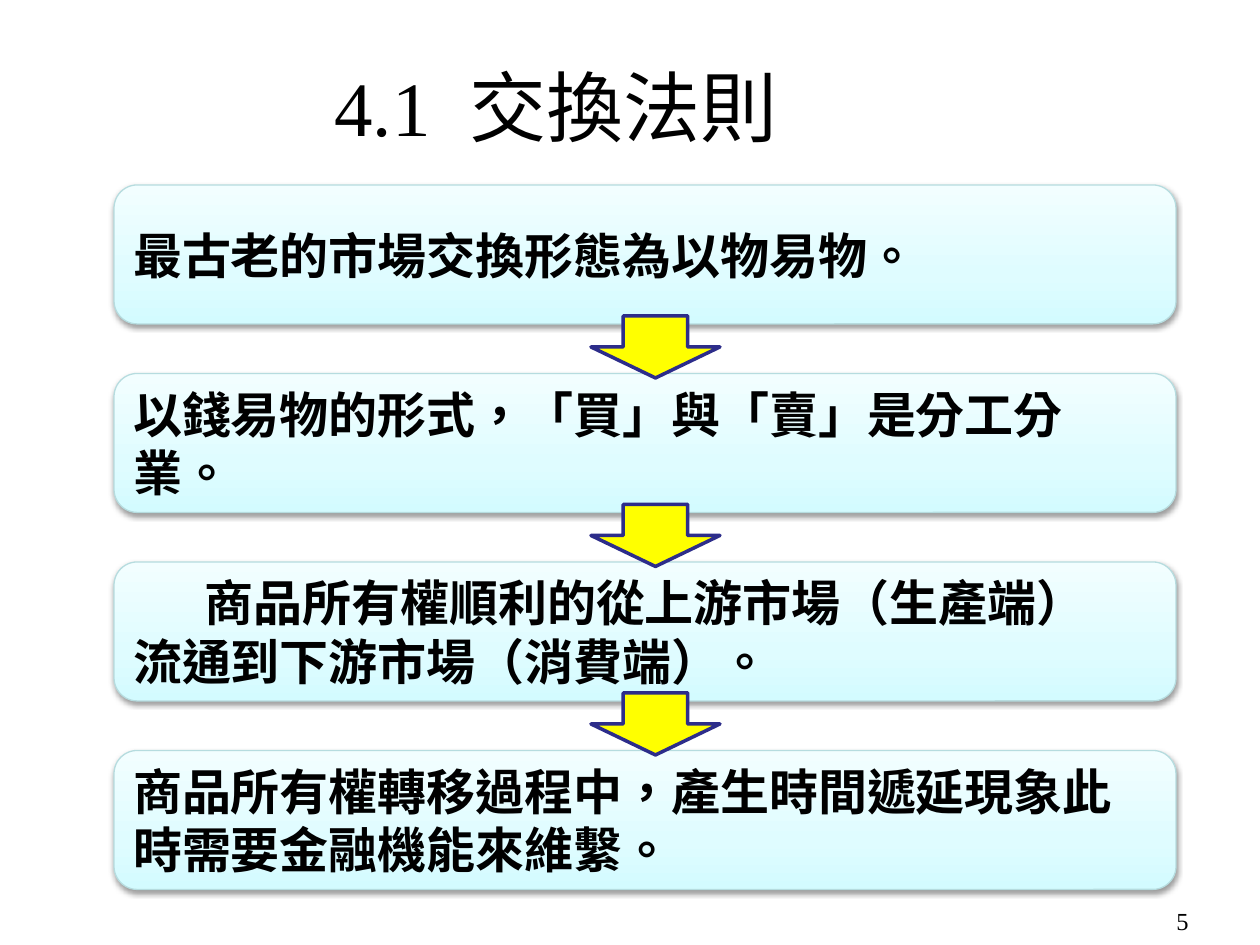
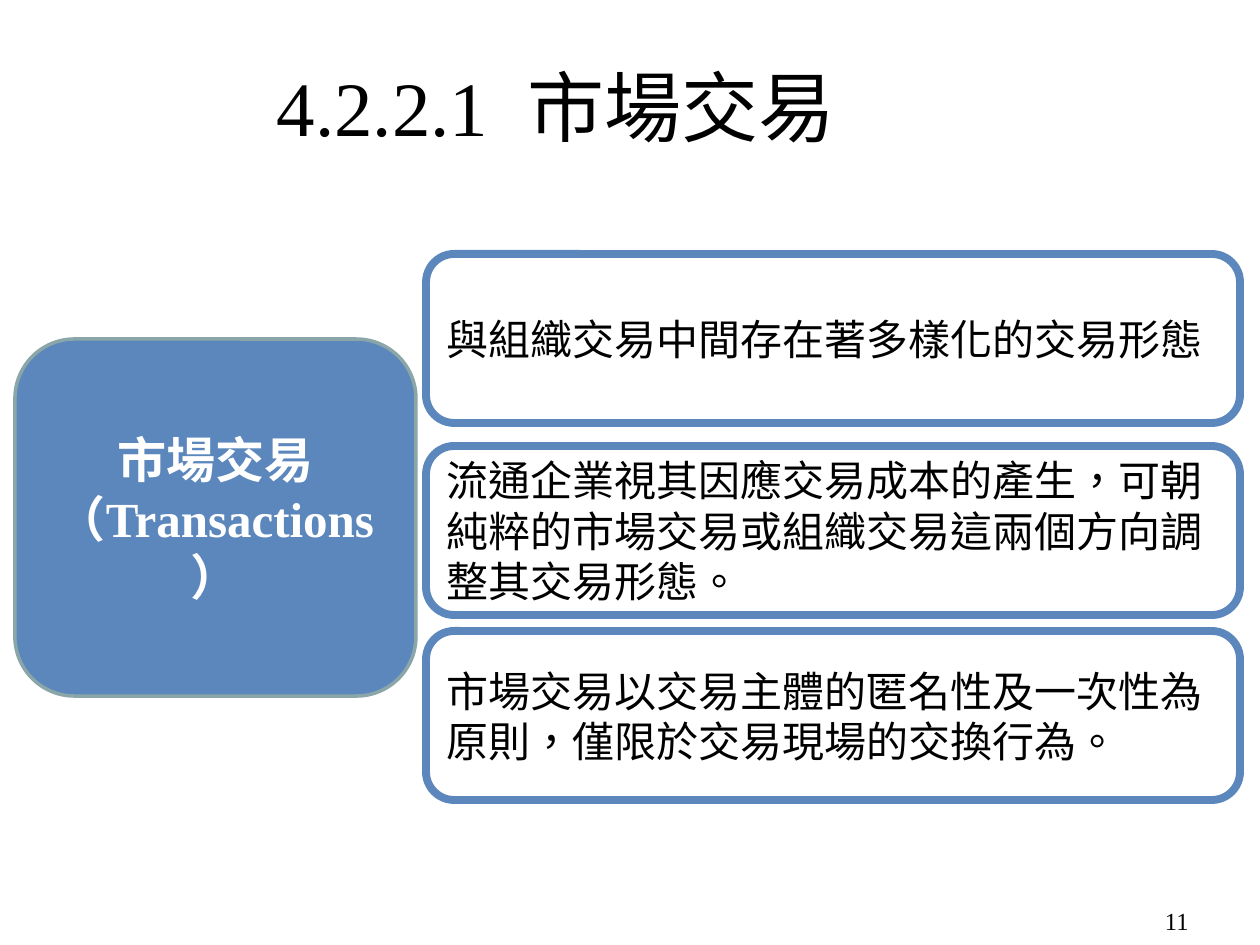
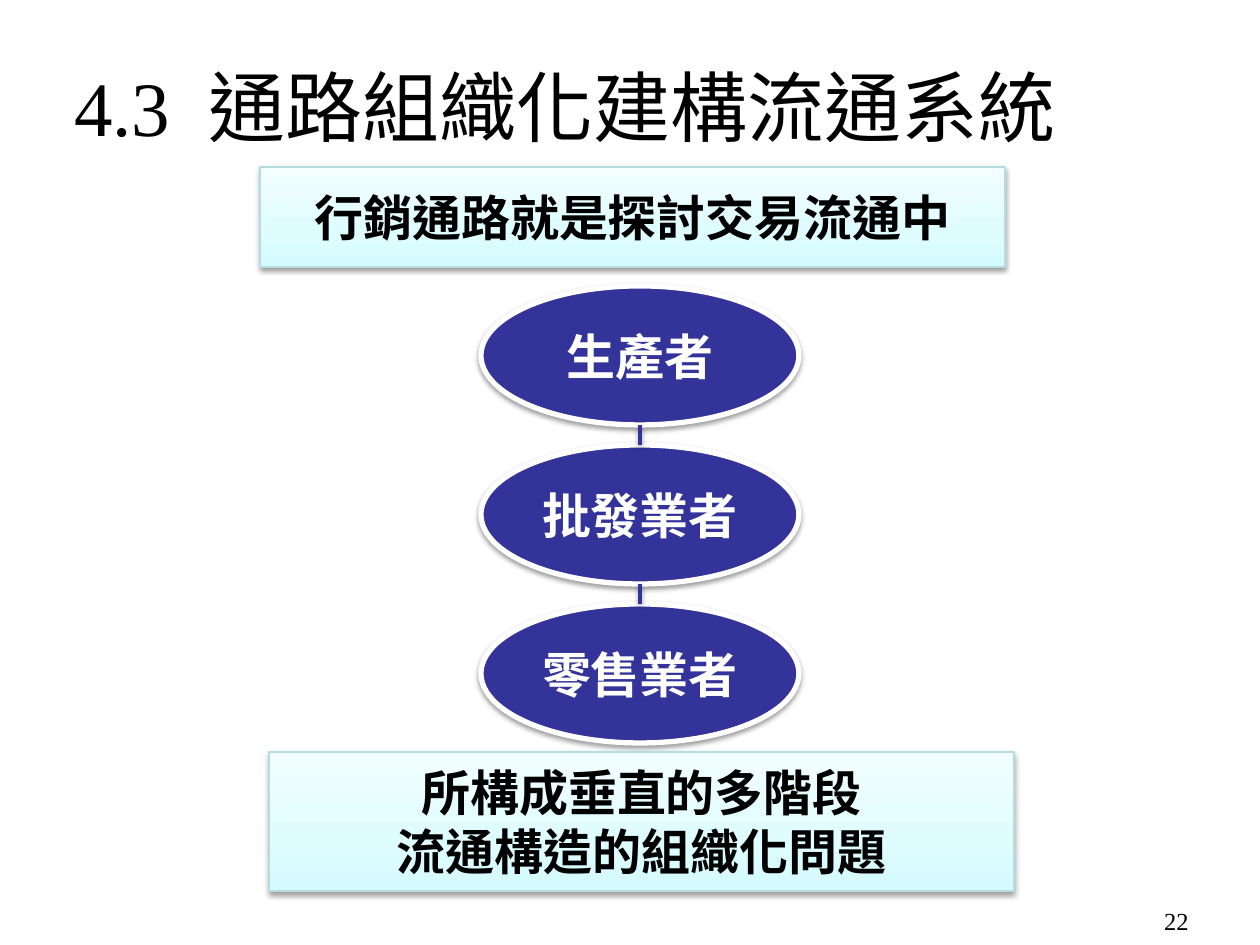
"""Build three slides on exchange rules, market transactions and channel organisation."""
from copy import deepcopy
from dataclasses import dataclass

from lxml import etree
from pptx import Presentation
from pptx.dml.color import RGBColor
from pptx.enum.shapes import MSO_CONNECTOR, MSO_SHAPE
from pptx.enum.text import MSO_ANCHOR, PP_ALIGN
from pptx.oxml.ns import qn
from pptx.util import Pt

PX = 914400 / 126
ROUNDED, RECTANGLE, ELLIPSE, DOWN_ARROW = (
    MSO_SHAPE.ROUNDED_RECTANGLE, MSO_SHAPE.RECTANGLE, MSO_SHAPE.OVAL, MSO_SHAPE.DOWN_ARROW)
LEFT, CENTER, RIGHT = PP_ALIGN.LEFT, PP_ALIGN.CENTER, PP_ALIGN.RIGHT
TOP, MIDDLE = MSO_ANCHOR.TOP, MSO_ANCHOR.MIDDLE


@dataclass(frozen=True)
class Theme:
    """Colours, fonts and type sizes shared by the slides."""
    black: str = "000000"
    white: str = "FFFFFF"
    indigo: str = "333399"
    arrow_fill: str = "FFFF00"
    arrow_line: str = "2D2D8A"
    blue: str = "5C87BC"
    hub_line: str = "8AA6A8"
    panel_line: str = "B6DCDF"
    panel_stops: tuple = ((0, "D3FBFF"), (0.35, "DFFCFF"), (1, "F2FEFF"))
    latin: str = "Times New Roman"
    chinese: str = "Noto Sans CJK SC"
    title_size: int = 44
    title_gap: int = 11
    strong_size: int = 28
    body_size: int = 24
    page_size: int = 14


THEME = Theme()

EXCHANGE = {
    "title": ("4.1", "交換法則"), "page": "5",
    "steps": [
        [("最古老的市場交換形態為以物易物。", LEFT)],
        [("以錢易物的形式，「買」與「賣」是分工分業。", LEFT)],
        [("商品所有權順利的從上游市場（生產端）", CENTER), ("流通到下游市場（消費端）。", LEFT)],
        [("商品所有權轉移過程中，產生時間遞延現象此時需要金融機能來維繫。", LEFT)],
    ],
}
TRANSACTIONS = {
    "title": ("4.2.2.1", "市場交易"), "page": "11",
    "hub": [("市場交易", CENTER), ("（Transactions）", CENTER)],
    "points": [
        (254, "與組織交易中間存在著多樣化的交易形態"),
        (446, "流通企業視其因應交易成本的產生，可朝純粹的市場交易或組織交易這兩個方向調整其交易形態。"),
        (631, "市場交易以交易主體的匿名性及一次性為原則，僅限於交易現場的交換行為。"),
    ],
}
CHANNEL = {
    "title": ("4.3", "通路組織化建構流通系統"), "page": "22",
    "members": ["生產者", "批發業者", "零售業者"],
    "panels": [
        ((260, 167, 745, 100), [("行銷通路就是探討交易流通中", CENTER)]),
        ((269, 752, 745, 139), [("所構成垂直的多階段", CENTER), ("流通構造的組織化問題", CENTER)]),
    ],
}


def emu(*lengths):
    """Turn px lengths into EMU."""
    return [round(length * PX) for length in lengths]


def style_run(run, size, color, bold=False, latin=THEME.chinese):
    """Format one run for mixed Latin and Chinese text."""
    font = run.font
    font.size, font.bold, font.name = Pt(size), bold, latin
    font.color.rgb = RGBColor.from_string(color)
    properties = run._r.get_or_add_rPr()
    properties.set("lang", "zh-TW")
    etree.SubElement(properties, qn("a:ea")).set("typeface", THEME.chinese)


def write(shape, lines, size, color=THEME.black, anchor=MIDDLE, **style):
    """Fill a shape with aligned lines of text, keeping punctuation inside the margins."""
    frame = shape.text_frame
    frame.word_wrap, frame.vertical_anchor = True, anchor
    frame.text = "\n".join(text for text, _ in lines)
    for paragraph, (_, alignment) in zip(frame.paragraphs, lines):
        paragraph.alignment = alignment
        paragraph._p.get_or_add_pPr().set("hangingPunct", "0")
        for run in paragraph.runs:
            style_run(run, size, color, **style)


def add_shadow(shape):
    """Give a shape or connector the soft shadow below it."""
    properties = shape._element.spPr
    effects = properties.find(qn("a:effectLst"))
    if effects is None:
        effects = etree.SubElement(properties, qn("a:effectLst"))
    shadow = etree.SubElement(effects, qn("a:outerShdw"), blurRad=str(Pt(3.1)),
                              dist=str(Pt(1.6)), dir="5400000", rotWithShape="0")
    color = etree.SubElement(shadow, qn("a:srgbClr"), val=THEME.black)
    etree.SubElement(color, qn("a:alpha"), val="38000")


def add_box(slide, kind, place, fill, line, width):
    """Add a preset shape with a plain fill and outline."""
    shape = slide.shapes.add_shape(kind, *emu(*place))
    shape.shadow.inherit = False
    shape.fill.solid()
    shape.fill.fore_color.rgb = RGBColor.from_string(fill)
    shape.line.color.rgb = RGBColor.from_string(line)
    shape.line.width = Pt(width)
    return shape


def add_panel(slide, kind, place, lines):
    """Add a shadowed pale gradient panel with bold text."""
    panel = add_box(slide, kind, place, THEME.white, THEME.panel_line, 0.75)
    panel.fill.gradient()
    panel.fill.gradient_angle = 90
    stop_list = panel._element.spPr.find(".//" + qn("a:gsLst"))
    stop_list.append(deepcopy(stop_list[0]))
    for stop, (position, color) in zip(panel.fill.gradient_stops, THEME.panel_stops):
        stop.position = position
        stop.color.rgb = RGBColor.from_string(color)
    add_shadow(panel)
    write(panel, lines, THEME.strong_size, bold=True)


def add_slide(presentation, content, title_width=1062):
    """Add a blank slide with its title and page number."""
    slide = presentation.slides.add_slide(presentation.slide_layouts[6])
    title = slide.shapes.add_textbox(*emu(25, 46, title_width, 120))
    frame = title.text_frame
    frame.word_wrap, frame.vertical_anchor = True, MIDDLE
    paragraph = frame.paragraphs[0]
    paragraph.alignment = CENTER
    number, name = content["title"]
    for text in (number, " ", name):
        run = paragraph.add_run()
        run.text = text
        style_run(run, THEME.title_size, THEME.black, latin=THEME.latin)
    paragraph.runs[1]._r.rPr.set("spc", str(THEME.title_gap * 100))
    page = slide.shapes.add_textbox(*emu(1076, 900, 125, 39))
    write(page, [(content["page"], RIGHT)], THEME.page_size, anchor=TOP, latin=THEME.latin)
    return slide


def build_exchange(presentation):
    """Stack the steps of exchange and link them with arrows that stay clear of the text."""
    slide = add_slide(presentation, EXCHANGE)
    left, top, width, height, pitch = 114, 185, 1062, 139, 188.5
    arrow_width, arrow_height, overlap = 129, 62, 8
    tops = [top + index * pitch for index in range(len(EXCHANGE["steps"]))]
    for step_top, lines in zip(tops, EXCHANGE["steps"]):
        add_panel(slide, ROUNDED, (left, step_top, width, height), lines)
    for step_top in tops[:-1]:
        add_box(slide, DOWN_ARROW,
                (591, step_top + height - overlap, arrow_width, arrow_height),
                THEME.arrow_fill, THEME.arrow_line, 2)


def build_transactions(presentation):
    """Set the hub beside its three points."""
    slide = add_slide(presentation, TRANSACTIONS)
    for top, text in TRANSACTIONS["points"]:
        point = add_box(slide, ROUNDED, (426, top, 814, 169), THEME.white, THEME.blue, 4.5)
        write(point, [(text, LEFT)], THEME.body_size)
    hub = add_box(slide, ROUNDED, (15, 339, 401, 357), THEME.blue, THEME.hub_line, 2)
    write(hub, TRANSACTIONS["hub"], THEME.strong_size, THEME.white, bold=True, latin=THEME.latin)


def build_channel(presentation):
    """Chain the channel members between two panels."""
    slide = add_slide(presentation, CHANNEL, title_width=1081)
    left, top, width, height, pitch = 481, 286, 318, 139, 159
    center = left + width / 2
    for index, member in enumerate(CHANNEL["members"]):
        member_top = top + index * pitch
        oval = add_box(slide, ELLIPSE, (left, member_top, width, height),
                       THEME.indigo, THEME.white, 3)
        add_shadow(oval)
        write(oval, [(member, CENTER)], THEME.strong_size, THEME.white, bold=True)
        if index:
            link = slide.shapes.add_connector(MSO_CONNECTOR.STRAIGHT, *emu(
                center, member_top - pitch + height, center, member_top))
            link.line.color.rgb = RGBColor.from_string(THEME.indigo)
            link.line.width = Pt(2)
            add_shadow(link)
    for place, lines in CHANNEL["panels"]:
        add_panel(slide, RECTANGLE, place, lines)


def main():
    """Build and save the presentation."""
    presentation = Presentation()
    presentation.slide_width, presentation.slide_height = emu(1260, 945)
    build_exchange(presentation)
    build_transactions(presentation)
    build_channel(presentation)
    presentation.save("out.pptx")


if __name__ == "__main__":
    main()
